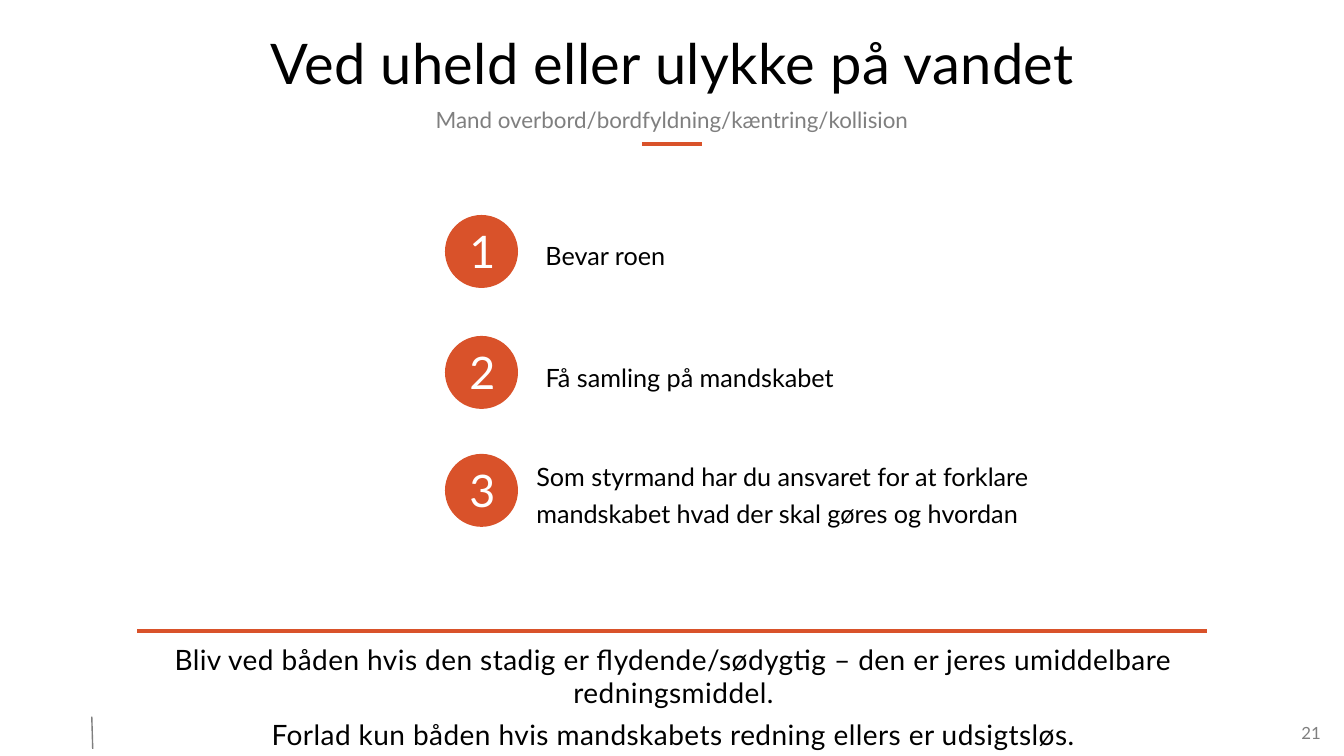
from dataclasses import dataclass

import pptx
import pptx.dml.color
import pptx.enum.shapes
import pptx.enum.text
import pptx.oxml.ns
import pptx.util
from lxml import etree

ALIGN = pptx.enum.text.PP_ALIGN
SLIDE_W = pptx.util.Inches(13.33)
SLIDE_H = pptx.util.Inches(7.5)


@dataclass(frozen=True)
class Theme:
    font: str = "Lato"
    ink: str = "000000"
    muted: str = "7F7F7F"
    accent: str = "D9522A"
    light: str = "FFFFFF"
    title: int = 40
    number: int = 32
    closing: int = 20
    body: int = 18
    subtitle: int = 16
    page: int = 12


@dataclass(frozen=True)
class Box:
    """Percentages of the slide's width and height."""
    x: float
    y: float
    w: float
    h: float

    def emu(self) -> tuple[int, ...]:
        return px(self.x), py(self.y), px(self.w), py(self.h)


@dataclass(frozen=True)
class Text:
    box: Box
    lines: tuple[str, ...]
    size: int
    color: str
    align: ALIGN = ALIGN.LEFT
    spacing: float = 1.0
    tracking: int = 0
    before: int = 0
    padded: bool = False


@dataclass(frozen=True)
class Rule:
    x1: float
    y1: float
    x2: float
    y2: float
    color: str
    width: int


@dataclass(frozen=True)
class Step:
    top: float
    label: str
    box: Box


THEME = Theme()


def px(share: float) -> int:
    return round(SLIDE_W * share / 100)


def py(share: float) -> int:
    return round(SLIDE_H * share / 100)


def rgb(value: str) -> pptx.dml.color.RGBColor:
    return pptx.dml.color.RGBColor.from_string(value)


def apply(target: object, values: dict[str, object]) -> None:
    for name, value in values.items():
        setattr(target, name, value)


def draw_text(shapes, item: Text) -> None:
    tf = shapes.add_textbox(*item.box.emu()).text_frame
    frame = {"word_wrap": True,
             "auto_size": pptx.enum.text.MSO_AUTO_SIZE.SHAPE_TO_FIT_TEXT}
    if not item.padded:
        frame |= {f"margin_{side}": 0 for side in ("left", "top", "right", "bottom")}
    apply(tf, frame)
    for i, line in enumerate(item.lines):
        p = tf.add_paragraph() if i else tf.paragraphs[0]
        apply(p, {"alignment": item.align, "line_spacing": item.spacing})
        if i and item.before:
            p.space_before = pptx.util.Pt(item.before)
        r = p.add_run()
        r.text = line
        apply(r.font, {"name": THEME.font, "size": pptx.util.Pt(item.size)})
        r.font.color.rgb = rgb(item.color)
        if item.tracking:
            r.font._element.set("spc", str(item.tracking))


def draw_rule(shapes, rule: Rule) -> None:
    sp = shapes.add_connector(pptx.enum.shapes.MSO_CONNECTOR.STRAIGHT,
                              px(rule.x1), py(rule.y1), px(rule.x2), py(rule.y2))
    sp.line.color.rgb = rgb(rule.color)
    sp.line.width = pptx.util.Pt(rule.width)
    etree.SubElement(sp._element.spPr, pptx.oxml.ns.qn("a:effectLst"))


def draw_step(shapes, number: int, step: Step) -> None:
    group = shapes.add_group_shape().shapes
    draw_text(group, Text(step.box, (step.label,), THEME.body, THEME.ink, spacing=1.2))
    sp = group.add_shape(pptx.enum.shapes.MSO_SHAPE.OVAL,
                         *Box(33.16, step.top, 5.33, 9.47).emu())
    sp.shadow.inherit = False
    sp.fill.solid()
    sp.fill.fore_color.rgb = rgb(THEME.accent)
    sp.line.color.rgb = rgb(THEME.accent)
    sp.line.width = pptx.util.Pt(1)
    draw_text(group, Text(Box(34.58, step.top + 1.07, 2.63, 7.2), (str(number),),
                          THEME.number, THEME.light, ALIGN.CENTER))


STEPS = (
    Step(28.53, "Bevar roen", Box(40.59, 30.93, 14.85, 4.53)),
    Step(44.53, "Få samling på mandskabet", Box(40.59, 47.07, 33.01, 4.53)),
    Step(60.13, "Som styrmand har du ansvaret for at forklare mandskabet "
                "hvad der skal gøres og hvordan", Box(39.91, 60.27, 42.39, 9.33)),
)
TEXTS = (
    # Heading
    Text(Box(4.58, 4.13, 90.92, 9.47), ("Ved uheld eller ulykke på vandet",),
         THEME.title, THEME.ink, ALIGN.CENTER, 0.9, 30, padded=True),
    Text(Box(4.58, 12, 90.85, 5.87), ("Mand overbord/bordfyldning/kæntring/kollision",),
         THEME.subtitle, THEME.muted, ALIGN.CENTER, 1.4, padded=True),
    # Closing advice
    Text(Box(6.23, 84.27, 87.77, 11.47),
         ("Bliv ved båden hvis den stadig er flydende/sødygtig – "
          "den er jeres umiddelbare redningsmiddel.",
          "Forlad kun båden hvis mandskabets redning ellers er udsigtsløs."),
         THEME.closing, THEME.ink, ALIGN.CENTER, tracking=30, before=6, padded=True),
    # Page number
    Text(Box(95.42, 95.6, 2.85, 2.67), ("21",), THEME.page, THEME.muted, ALIGN.RIGHT),
)
RULES = (
    Rule(6.83, 94.8, 6.9, 99.07, THEME.muted, 1),
    Rule(10.2, 83.47, 89.8, 83.47, THEME.accent, 3),
    Rule(47.79, 19.07, 52.21, 19.07, THEME.accent, 3),
)


def main() -> None:
    prs = pptx.Presentation()
    apply(prs, {"slide_width": SLIDE_W, "slide_height": SLIDE_H})
    shapes = prs.slides.add_slide(prs.slide_layouts[6]).shapes
    for rule in RULES:
        draw_rule(shapes, rule)
    for item in TEXTS:
        draw_text(shapes, item)
    for number, step in enumerate(STEPS, 1):
        draw_step(shapes, number, step)
    prs.save("out.pptx")


if __name__ == "__main__":
    main()
